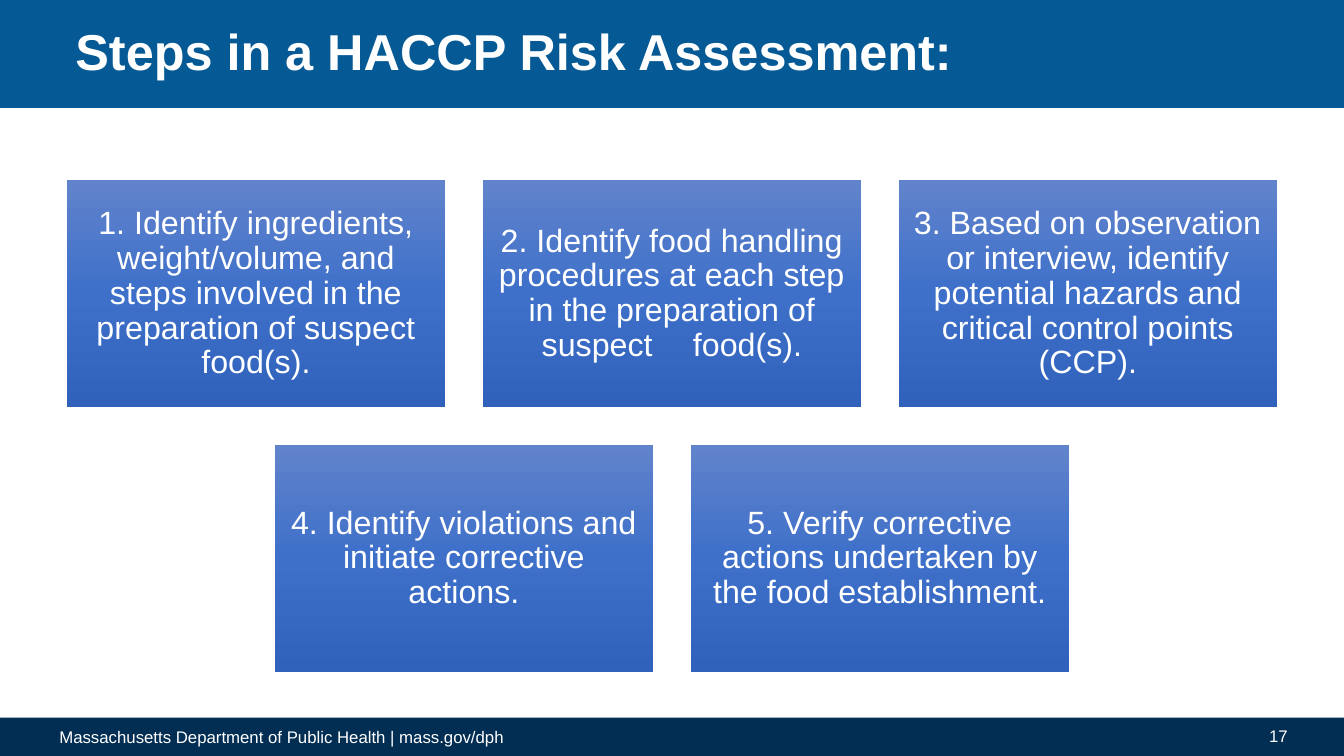
from copy import deepcopy
from pptx import Presentation
from pptx.dml.color import RGBColor
from pptx.enum.shapes import MSO_SHAPE
from pptx.enum.text import MSO_ANCHOR, PP_ALIGN
from pptx.util import Inches, Pt

WIDE, HIGH = 13.33, 7.5
CARD_W, CARD_H, GAP, TOP = 3.75, 2.25, 0.375, 1.79
SHADES = ["6183CB", "3E70CA", "3062BB"]
ROWS = [
    [
        "1. Identify ingredients, weight/volume, and steps involved in the preparation of suspect food(s).",
        "2. Identify food handling procedures at each step in the preparation of suspect \tfood(s).",
        "3. Based on observation or interview, identify potential hazards and critical control points (CCP).",
    ],
    [
        "4. Identify violations and initiate corrective actions.",
        "5. Verify corrective actions undertaken by the food establishment.",
    ],
]


def color(code):
    """Turn a hex string into a colour."""
    return RGBColor.from_string(code)


def write(shape, text, size, align=PP_ALIGN.LEFT, bold=False, lines=1.0):
    """Set white text in a shape, centred in height."""
    frame = shape.text_frame
    frame.word_wrap = True
    frame.vertical_anchor = MSO_ANCHOR.MIDDLE
    frame.text = text
    para = frame.paragraphs[0]
    para.alignment = align
    para.line_spacing = lines
    font = para.runs[0].font
    font.name, font.size, font.bold = "Arial", Pt(size), bold
    font.color.rgb = color("FFFFFF")


def label(slide, box, text, size, **style):
    """Add a text box."""
    write(slide.shapes.add_textbox(*map(Inches, box)), text, size, **style)


def block(slide, box):
    """Add a plain rectangle without line or shadow."""
    shape = slide.shapes.add_shape(MSO_SHAPE.RECTANGLE, *map(Inches, box))
    shape.shadow.inherit = False
    shape.line.fill.background()
    return shape


def band(slide, top, height, code):
    """Add a solid band across the slide."""
    fill = block(slide, (0, top, WIDE, height)).fill
    fill.solid()
    fill.fore_color.rgb = color(code)


def shade(fill):
    """Fill with a gradient that runs from top to bottom."""
    fill.gradient()
    fill.gradient_angle = 270
    first = fill.gradient_stops[0]._gs
    first.addnext(deepcopy(first))
    for index, (stop, code) in enumerate(zip(fill.gradient_stops, SHADES)):
        stop.position = index / 2
        stop.color.rgb = color(code)


def card(slide, left, top, text):
    """Add one step of the assessment."""
    shape = block(slide, (left, top, CARD_W, CARD_H))
    shade(shape.fill)
    frame = shape.text_frame
    frame.margin_left = frame.margin_right = Inches(0.1)
    frame.margin_top = frame.margin_bottom = Inches(0.1)
    write(shape, text, 23, align=PP_ALIGN.CENTER, lines=0.9)


def grid(slide):
    """Lay the steps out in centred rows."""
    for row, steps in enumerate(ROWS):
        span = len(steps) * (CARD_W + GAP) - GAP
        left = (WIDE - span) / 2
        top = TOP + row * (CARD_H + GAP)
        for col, step in enumerate(steps):
            card(slide, left + col * (CARD_W + GAP), top, step)


def main():
    """Build and save the slide."""
    deck = Presentation()
    deck.slide_width, deck.slide_height = Inches(WIDE), Inches(HIGH)
    slide = deck.slides.add_slide(deck.slide_layouts[6])
    band(slide, 0, 1.07, "055994")
    band(slide, HIGH - 0.38, 0.38, "032E53")
    label(slide, (0.49, 7.16, 5.51, 0.3),
          "Massachusetts Department of Public Health | mass.gov/dph", 12)
    label(slide, (0.65, 0.06, 12, 0.96),
          "Steps in a HACCP Risk Assessment:", 36, bold=True, lines=0.9)
    label(slide, (9.88, 7.1, 2.99, 0.4), "17", 12, align=PP_ALIGN.RIGHT)
    grid(slide)
    deck.save("out.pptx")


if __name__ == "__main__":
    main()
